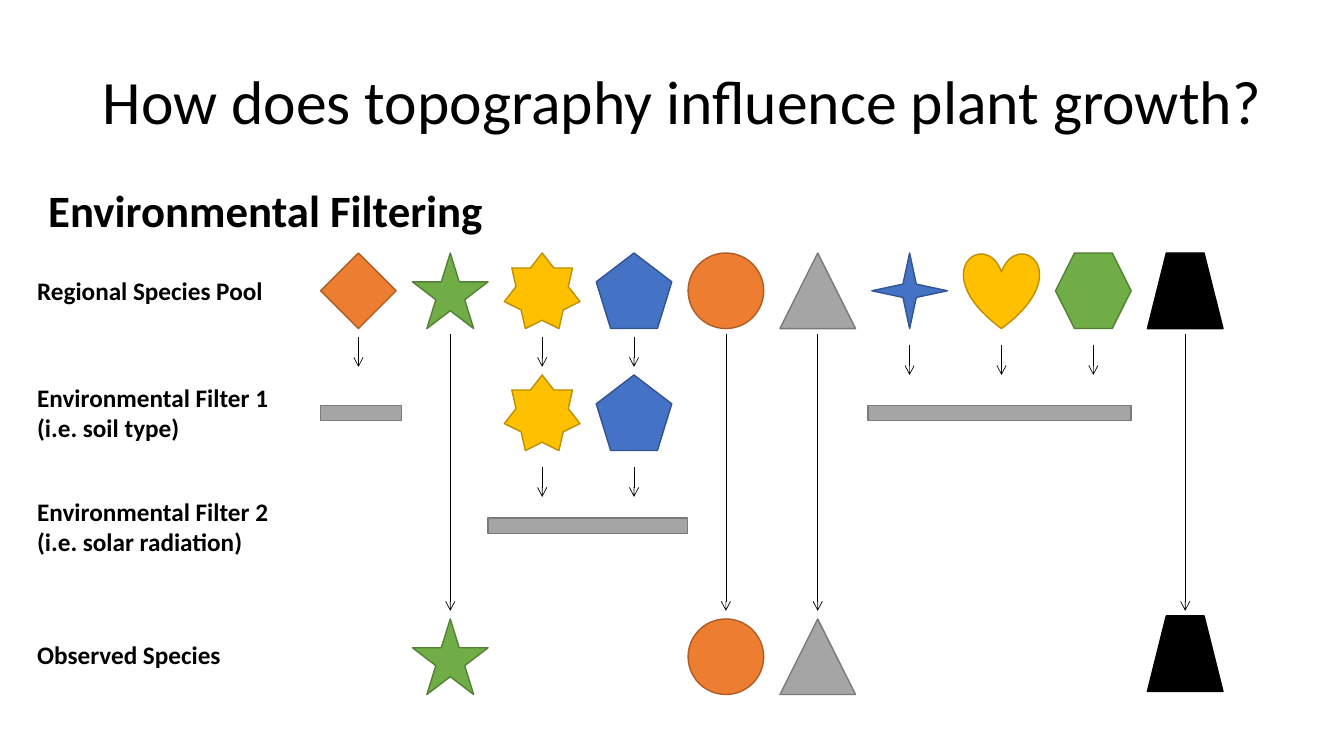
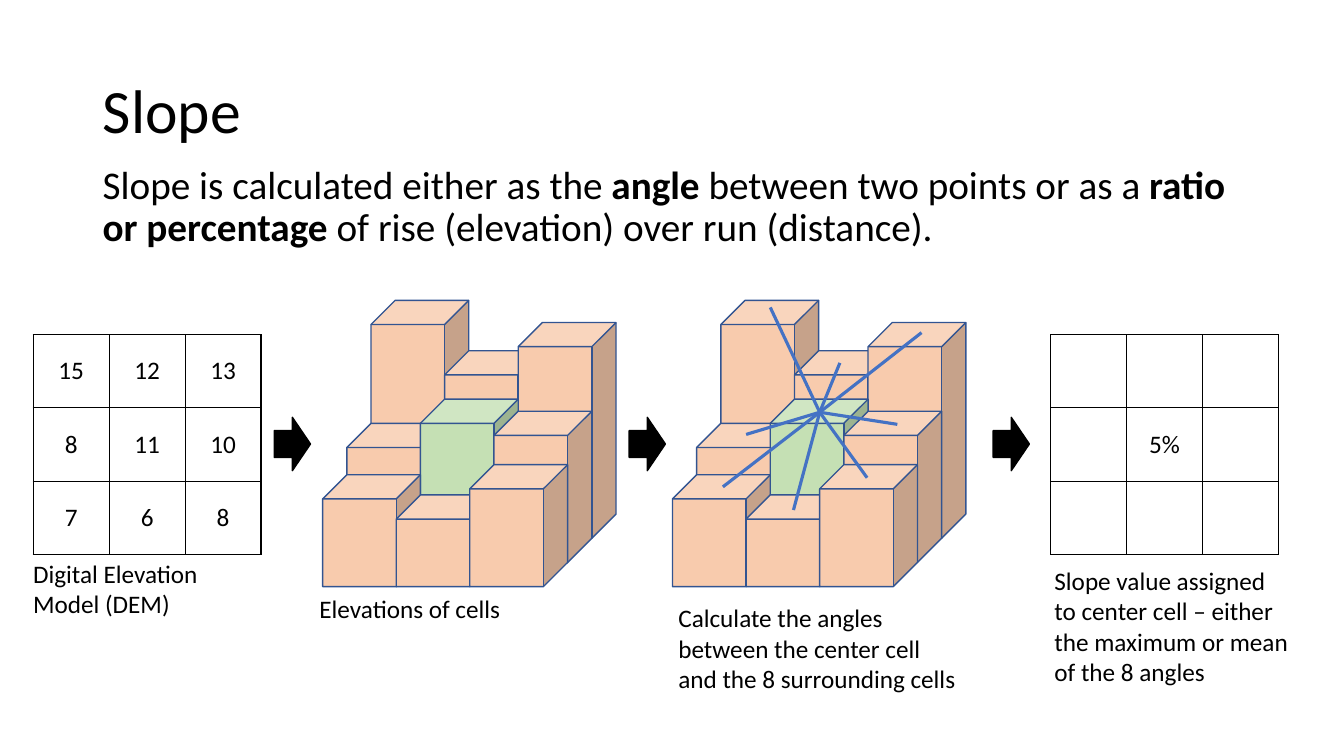
"""Build two slides on environmental filtering and slope."""
from lxml.etree import SubElement
from pptx import Presentation
from pptx.dml.color import RGBColor
from pptx.enum.shapes import MSO_CONNECTOR, MSO_SHAPE
from pptx.enum.text import MSO_ANCHOR, MSO_AUTO_SIZE, PP_ALIGN
from pptx.oxml.ns import qn
from pptx.util import Inches, Pt

FONT, BLACK = "Calibri", "000000"
ORANGE, GRAY, BLUE = ("ED7D31", "AF5C24"), ("A5A5A5", "7A7A7A"), ("4472C4", "325491")
GREEN, GOLD, SOLID = ("70AD47", "538035"), ("FFC000", "BD8E00"), (BLACK, BLACK)
PEACH, CENTER = ("F8CBAD", "325491"), ("C5E0B4", "325491")

POOL, FILTERED, OBSERVED = 2.51, 3.72, 6.14
SHORT, LOWER, SECOND, LONG = (3.34, 3.64), (3.42, 3.72), (4.63, 4.93), (3.31, 6.06)
SPECIES_LEFT, SPECIES_STEP, SPECIES_SIZE = 3.18, 8.2 / 9, 0.75
SPECIES = [
    (MSO_SHAPE.DIAMOND, ORANGE, [POOL], [SHORT]),
    (MSO_SHAPE.STAR_5_POINT, GREEN, [POOL, OBSERVED], [LONG]),
    (MSO_SHAPE.STAR_7_POINT, GOLD, [POOL, FILTERED], [SHORT, SECOND]),
    (MSO_SHAPE.REGULAR_PENTAGON, BLUE, [POOL, FILTERED], [SHORT, SECOND]),
    (MSO_SHAPE.OVAL, ORANGE, [POOL, OBSERVED], [LONG]),
    (MSO_SHAPE.ISOSCELES_TRIANGLE, GRAY, [POOL, OBSERVED], [LONG]),
    (MSO_SHAPE.STAR_4_POINT, BLUE, [POOL], [LOWER]),
    (MSO_SHAPE.HEART, GOLD, [POOL], [LOWER]),
    (MSO_SHAPE.HEXAGON, GREEN, [POOL], [LOWER]),
    (MSO_SHAPE.TRAPEZOID, SOLID, [POOL, 6.11], [LONG]),
]
FILTER_BARS = [(3.18, 4.02, 0.8), (8.61, 4.02, 2.61), (4.84, 5.14, 1.98)]
ROW_LABELS = [
    ("Regional Species Pool", 2.68, 0.4),
    ("Environmental Filter 1\n(i.e. soil type)", 3.74, 0.71),
    ("Environmental Filter 2\n(i.e. solar radiation)", 4.87, 0.71),
    ("Observed Species", 6.29, 0.4),
]

SLOPE_TEXT = ("Slope is calculated either as the **angle** between two points or as a "
              "**ratio or percentage** of rise (elevation) over run (distance).")
TABLES = [
    (0.33, [["15", "12", "13"], ["8", "11", "10"], ["7", "6", "8"]]),
    (10.42, [["", "", ""], ["", "5%", ""], ["", "", ""]]),
]
CUBE_HEIGHTS = [[2.36, 1.86, 2.14], [1.38, 1.62, 1.5], [1.11, 0.91, 1.21]]
CUBE_WIDTH, CUBE_STEP, CUBE_DEPTH, CUBE_BOTTOM = 0.97, 0.73, 0.24, 5.34
GRID_LEFTS = [3.68, 7.15]
ANGLE_CENTER = (8.13, 4.09)
ANGLE_ENDS = [(7.64, 3.05), (8.33, 3.6), (9.14, 3.3), (7.4, 4.31),
              (8.9, 4.21), (8.6, 4.74), (7.87, 5.06), (7.17, 4.83)]
ARROW_LEFTS = [2.72, 6.24, 9.85]
CAPTIONS = [
    ("Digital Elevation\nModel (DEM)", (0.23, 5.49, 2.2, 0.71)),
    ("Elevations of cells", (3.07, 5.84, 2.4, 0.4)),
    ("Calculate the angles between the center cell and the 8 surrounding cells",
     (6.63, 5.93, 2.96, 1.01)),
    ("Slope value assigned to center cell – either the maximum or mean of the 8 angles",
     (10.36, 5.56, 2.54, 1.31)),
]


def rgb(value):
    """Turn a hex string into a colour."""
    return RGBColor.from_string(value)


def inches(values):
    """Turn numbers into lengths."""
    return [Inches(v) for v in values]


def write(tf, text, size=18, bold=False, align=PP_ALIGN.LEFT, spacing=1.0, before=0):
    """Write paragraphs split at line ends, with ** around bold words."""
    tf.word_wrap = True
    for i, line in enumerate(text.split("\n")):
        p = tf.add_paragraph() if i else tf.paragraphs[0]
        p.alignment, p.line_spacing, p.space_before = align, spacing, Pt(before)
        for j, part in enumerate(line.split("**")):
            r = p.add_run()
            r.text = part
            r.font.name, r.font.size = FONT, Pt(size)
            r.font.bold = bold or j % 2 == 1
            r.font.color.rgb = rgb(BLACK)


def add_text(slide, text, box, **style):
    """Add a text box."""
    write(slide.shapes.add_textbox(*inches(box)).text_frame, text, **style)


def add_shape(shapes, kind, box, colors):
    """Add a filled and outlined preset shape."""
    sp = shapes.add_shape(kind, *inches(box))
    sp.shadow.inherit = False
    sp.fill.solid()
    sp.fill.fore_color.rgb = rgb(colors[0])
    sp.line.color.rgb = rgb(colors[1])
    sp.line.width = Pt(1)
    return sp


def add_line(shapes, start, end, color, width, arrow=False):
    """Add a straight line, with an arrowhead at its end if asked."""
    line = shapes.add_connector(MSO_CONNECTOR.STRAIGHT, *inches(start + end))
    line.line.color.rgb = rgb(color)
    line.line.width = Pt(width)
    props = line._element.spPr
    if arrow:
        SubElement(props.find(qn("a:ln")), qn("a:tailEnd"), type="arrow")
    SubElement(props, qn("a:effectLst"))


def add_slide(prs, title, box):
    """Add a slide with a formatted title."""
    s = prs.slides.add_slide(prs.slide_layouts[5])
    sp = s.shapes.title
    sp.left, sp.top, sp.width, sp.height = inches(box)
    tf = sp.text_frame
    tf.auto_size, tf.vertical_anchor = MSO_AUTO_SIZE.NONE, MSO_ANCHOR.MIDDLE
    write(tf, title, size=44, spacing=0.9)
    return s


def add_grid_table(slide, left, rows):
    """Add an unfilled table with black borders."""
    box = inches((left, 3.32, 2.26, 2.18))
    table = slide.shapes.add_table(len(rows), len(rows[0]), *box).table
    table.first_row = table.horz_banding = False
    for i, row in enumerate(rows):
        for j, value in enumerate(row):
            cell = table.cell(i, j)
            cell.vertical_anchor = MSO_ANCHOR.MIDDLE
            if value:
                write(cell.text_frame, value, align=PP_ALIGN.CENTER)
            props = cell._tc.get_or_add_tcPr()
            for side in "LRTB":
                ln = SubElement(props, qn(f"a:ln{side}"), w=str(Pt(1)))
                SubElement(SubElement(ln, qn("a:solidFill")), qn("a:srgbClr"), val=BLACK)
            cell.fill.background()


def add_cubes(slide, left):
    """Add a group of cubes from back to front and return it."""
    group = slide.shapes.add_group_shape()
    for i, row in enumerate(CUBE_HEIGHTS):
        for j, height in enumerate(row):
            x = left + j * CUBE_STEP - i * CUBE_DEPTH
            y = CUBE_BOTTOM + i * CUBE_DEPTH - height
            colors = CENTER if i == j == 1 else PEACH
            cube = add_shape(group.shapes, MSO_SHAPE.CUBE, (x, y, CUBE_WIDTH, height), colors)
            cube.adjustments[0] = CUBE_DEPTH / min(CUBE_WIDTH, height)
    return group


def build_filtering(prs):
    """Build the slide on environmental filtering."""
    s = add_slide(prs, "How does topography influence plant growth?", (0.92, 0.31, 11.78, 1.45))
    add_text(s, "Environmental Filtering", (0.38, 1.82, 11.5, 0.5),
             size=32, bold=True, spacing=0.9, before=10)
    for text, top, height in ROW_LABELS:
        add_text(s, text, (0.27, top, 2.8, height), bold=True)
    for i, (kind, colors, tops, arrows) in enumerate(SPECIES):
        left = SPECIES_LEFT + i * SPECIES_STEP
        middle = left + SPECIES_SIZE / 2
        for top in tops:
            add_shape(s.shapes, kind, (left, top, SPECIES_SIZE, SPECIES_SIZE), colors)
        for start, end in arrows:
            add_line(s.shapes, (middle, start), (middle, end), BLACK, 0.5, arrow=True)
    for left, top, width in FILTER_BARS:
        add_shape(s.shapes, MSO_SHAPE.RECTANGLE, (left, top, width, 0.15), GRAY)


def build_slope(prs):
    """Build the slide on slope."""
    s = add_slide(prs, "Slope", (0.92, 0.4, 11.5, 1.45))
    add_text(s, SLOPE_TEXT, (0.92, 1.59, 11.5, 1.1), size=28, spacing=0.9, before=10)
    for left, rows in TABLES:
        add_grid_table(s, left, rows)
    groups = [add_cubes(s, left) for left in GRID_LEFTS]
    for end in ANGLE_ENDS:
        add_line(groups[1].shapes, ANGLE_CENTER, end, BLUE[0], 2.25)
    for left in ARROW_LEFTS:
        add_shape(s.shapes, MSO_SHAPE.RIGHT_ARROW, (left, 4.14, 0.36, 0.53), SOLID)
    for text, box in CAPTIONS:
        add_text(s, text, box)


def main():
    """Build and save the presentation."""
    prs = Presentation()
    prs.slide_width, prs.slide_height = Inches(13.33), Inches(7.5)
    build_filtering(prs)
    build_slope(prs)
    prs.save("out.pptx")


if __name__ == "__main__":
    main()
